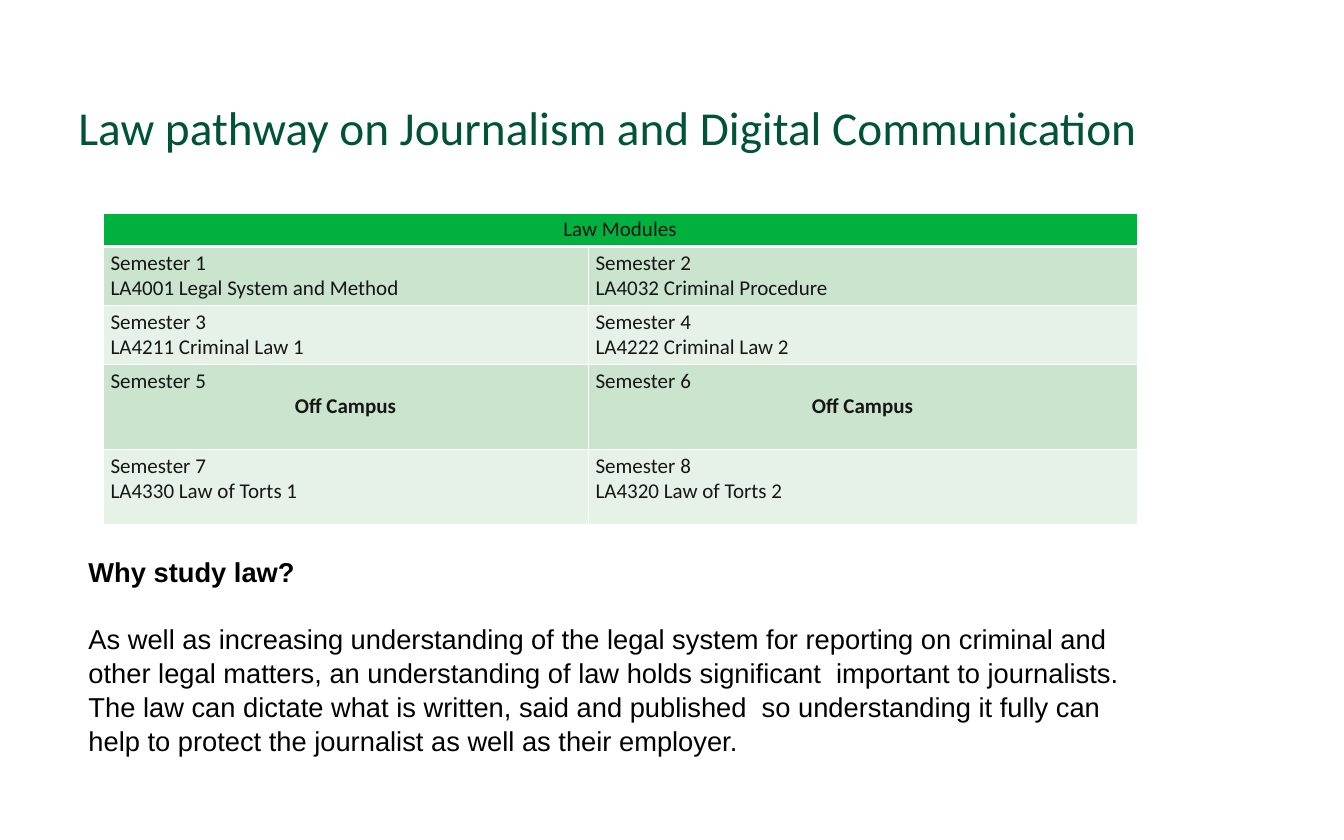
from lxml.etree import SubElement
from pptx import Presentation
from pptx.dml.color import RGBColor
from pptx.enum.text import MSO_ANCHOR, PP_ALIGN
from pptx.oxml.ns import qn
from pptx.util import Emu, Pt

EMU_PER_PX = 914400 / 75.6
COLUMN_WIDTHS = (485, 549)
ROW_HEIGHTS = (33, 59, 59, 85, 75)
BAND_FILLS = ("CAE4CD", "E6F2E8")
MODULES = (
    "LA4001 Legal System and Method", "LA4032 Criminal Procedure",
    "LA4211 Criminal Law 1", "LA4222 Criminal Law 2",
    "Off Campus", "Off Campus",
    "LA4330 Law of Torts 1", "LA4320 Law of Torts 2",
)
REASON = (
    "As well as increasing understanding of the legal system for reporting on "
    "criminal and other legal matters, an understanding of law holds significant  "
    "important to journalists. The law can dictate what is written, said and "
    "published  so understanding it fully can help to protect the journalist as "
    "well as their employer."
)
TITLE_FONT = {"name": "Calibri", "size": Pt(45), "bold": False}
TABLE_FONT = {"name": "Calibri", "size": Pt(20), "bold": False}
BODY_FONT = {"name": "Arial", "size": Pt(26), "bold": False}


def px(length):
    """Turn pixels into EMU."""
    return Emu(round(length * EMU_PER_PX))


def color(value):
    """Turn a hex string into a colour."""
    return RGBColor.from_string(value)


def set_values(target, values):
    """Set each named attribute on the target."""
    for name, value in values.items():
        setattr(target, name, value)


def write_paragraphs(frame, lines, font, ink):
    """Write (text, font changes, paragraph format) lines into a text frame."""
    for index, (text, changes, layout) in enumerate(lines):
        paragraph = frame.add_paragraph() if index else frame.paragraphs[0]
        run = paragraph.add_run()
        run.text = text
        set_values(paragraph, layout)
        set_values(run.font, font | changes)
        run.font.color.rgb = color(ink)


def add_text(slide, box, lines, font, ink):
    """Place a wrapping text box."""
    frame = slide.shapes.add_textbox(*map(px, box)).text_frame
    set_values(frame, {"word_wrap": True, "vertical_anchor": MSO_ANCHOR.TOP})
    write_paragraphs(frame, lines, font, ink)
    return frame


def style_cell(cell, fill, top, bottom):
    """Give a cell white borders and a solid fill."""
    properties = cell._tc.get_or_add_tcPr()
    for side, width in {"L": 1, "R": 1, "T": top, "B": bottom}.items():
        line = SubElement(properties, qn(f"a:ln{side}"), w=str(Pt(width)))
        solid = SubElement(line, qn("a:solidFill"))
        SubElement(solid, qn("a:srgbClr"), val="FFFFFF")
    cell.fill.solid()
    cell.fill.fore_color.rgb = color(fill)


def add_modules(slide, left, top):
    """Place the table of law modules by semester."""
    size = px(sum(COLUMN_WIDTHS)), px(sum(ROW_HEIGHTS))
    table = slide.shapes.add_table(
        len(ROW_HEIGHTS), len(COLUMN_WIDTHS), px(left), px(top), *size
    ).table
    set_values(table, {"first_row": False, "horz_banding": False})
    for column, width in zip(table.columns, COLUMN_WIDTHS):
        column.width = px(width)
    for row, height in zip(table.rows, ROW_HEIGHTS):
        row.height = px(height)

    for cell in table.rows[0].cells:
        style_cell(cell, "00B140", 1, 3)
    header = table.cell(0, 0)
    header.merge(table.cell(0, 1))
    header.vertical_anchor = MSO_ANCHOR.MIDDLE
    heading = [("Law Modules", {}, {"alignment": PP_ALIGN.CENTER})]
    write_paragraphs(header.text_frame, heading, TABLE_FONT, "171616")

    for index, module in enumerate(MODULES):
        row, column = divmod(index, len(COLUMN_WIDTHS))
        cell = table.cell(row + 1, column)
        style_cell(cell, BAND_FILLS[row % 2], 1 if row else 3, 1)
        away = module == "Off Campus"
        alignment = PP_ALIGN.CENTER if away else PP_ALIGN.LEFT
        lines = [
            (f"Semester {index + 1}", {}, {}),
            (module, {"bold": away}, {"alignment": alignment}),
        ]
        write_paragraphs(cell.text_frame, lines, TABLE_FONT, "171616")


def add_reasons(slide, box):
    """Place the question and its answer."""
    lines = [
        ("Why study law?", {"bold": True}, {"line_spacing": 1.04}),
        (REASON, {}, {"line_spacing": 1.04, "space_before": Pt(31)}),
    ]
    frame = add_text(slide, box, lines, BODY_FONT, "000000")
    set_values(frame, {"margin_top": px(8), "margin_bottom": px(8)})


def main():
    """Build and save the slide."""
    presentation = Presentation()
    set_values(presentation, {"slide_width": px(1344), "slide_height": px(840)})
    slide = presentation.slides.add_slide(presentation.slide_layouts[6])
    add_modules(slide, 103, 213)
    title = "Law pathway on Journalism and Digital Communication"
    add_text(slide, (71, 101, 1159, 86), [(title, {}, {"line_spacing": 0.9})],
             TITLE_FONT, "005336")
    add_reasons(slide, (81, 546, 1083, 248))
    presentation.save("out.pptx")


if __name__ == "__main__":
    main()
